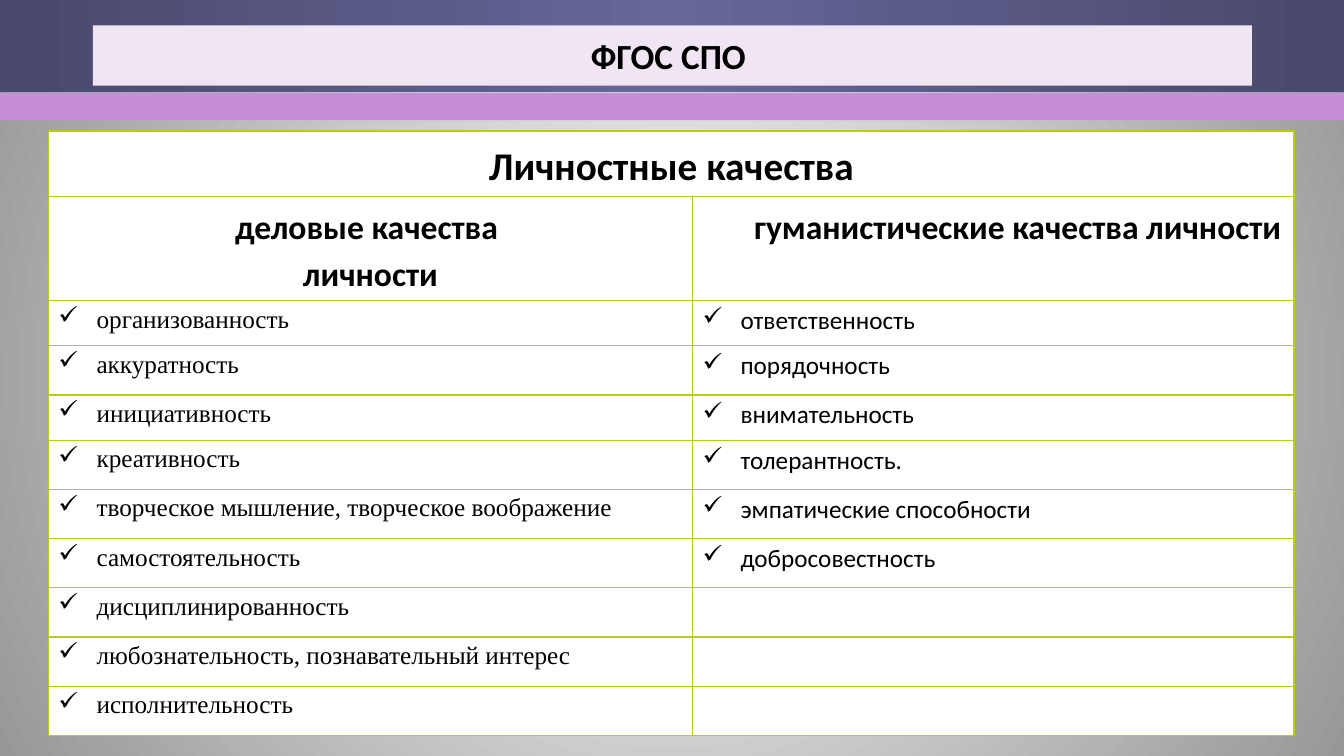
"""Build the slide on personal qualities in the ФГОС СПО standard."""
from dataclasses import dataclass
from itertools import zip_longest

from lxml.etree import SubElement
from pptx import Presentation
from pptx.dml.color import RGBColor
from pptx.enum.shapes import MSO_SHAPE
from pptx.enum.text import MSO_ANCHOR, MSO_AUTO_SIZE, PP_ALIGN
from pptx.oxml.ns import qn
from pptx.util import Cm, Pt


@dataclass(frozen=True)
class Theme:
    ink: str = "000000"
    paper: str = "FFFFFF"
    edge: str = "B9CA1A"
    title: str = "F0E5F3"
    stripe: str = "C78DD7"
    back: tuple = ((0, "FFFFFF"), (100, "979797"))
    band: tuple = ((0, "49496D"), (50, "666699"), (100, "49496D"))
    sans: str = "Calibri"
    serif: str = "Times New Roman"
    name: float = 25.2
    top: float = 28
    head: float = 24
    item: float = 18


@dataclass(frozen=True)
class Column:
    width: float
    font: str
    head: tuple
    indent: float
    items: tuple


THEME = Theme()
WIDTH = 33.87
COLUMNS = (
    Column(16.23, THEME.serif, ("деловые качества ", "личности"), 0, (
        "организованность", "аккуратность", "инициативность", "креативность",
        "творческое мышление, творческое воображение", "самостоятельность",
        "дисциплинированность", "любознательность, познавательный интерес",
        "исполнительность")),
    Column(15.16, THEME.sans, ("гуманистические качества личности",), 1.24, (
        "ответственность", "порядочность", "внимательность", "толерантность.",
        "эмпатические способности", "добросовестность")),
)
ROWS = (1.55, 2.54, 1.14, 1.24, 1.14) + (1.24,) * 6


def blend(solid, stops: tuple, radial: bool = False) -> None:
    grad = solid.makeelement(qn("a:gradFill"), {"rotWithShape": "1"})
    chain = SubElement(grad, qn("a:gsLst"))
    for place, color in stops:
        stop = SubElement(chain, qn("a:gs"), pos=str(place * 1000))
        SubElement(stop, qn("a:srgbClr"), val=color)
    if radial:
        ring = SubElement(grad, qn("a:path"), {"path": "circle"})
        SubElement(ring, qn("a:fillToRect"), dict.fromkeys("ltrb", "50000"))
    else:
        SubElement(grad, qn("a:lin"), ang="0", scaled="0")
    solid.getparent().replace(solid, grad)


def paint(fill, color: str) -> None:
    fill.solid()
    fill.fore_color.rgb = RGBColor.from_string(color)


def style(para, size: float, font: str, bold: bool) -> None:
    para.font.size = Pt(size)
    para.font.name = font
    para.font.bold = bold
    para.font.color.rgb = RGBColor.from_string(THEME.ink)


def strip(slide, top: float, height: float):
    shape = slide.shapes.add_shape(
        MSO_SHAPE.RECTANGLE, 0, Cm(top), Cm(WIDTH), Cm(height))
    shape.shadow.inherit = False
    shape.line.fill.background()
    paint(shape.fill, THEME.stripe)
    return shape


def dress(cell) -> None:
    props = cell._tc.get_or_add_tcPr()
    for side in "LRTB":
        line = SubElement(props, qn(f"a:ln{side}"), w=str(Pt(1)))
        solid = SubElement(line, qn("a:solidFill"))
        SubElement(solid, qn("a:srgbClr"), val=THEME.edge)
    paint(cell.fill, THEME.paper)


def label(cell, lines: tuple, size: float, indent: float = 0) -> None:
    cell.text = "\n".join(lines)
    for para in cell.text_frame.paragraphs:
        style(para, size, THEME.sans, True)
        para.alignment = PP_ALIGN.CENTER
        para.line_spacing = 1.15
        para._p.get_or_add_pPr().set("indent", str(Cm(indent)))


def check(cell, text: str, font: str) -> None:
    cell.text = text
    para = cell.text_frame.paragraphs[0]
    style(para, THEME.item, font, False)
    para.alignment = PP_ALIGN.JUSTIFY
    props = para._p.get_or_add_pPr()
    props.set("marL", str(Cm(0.96)))
    props.set("indent", str(-Cm(0.96)))
    mark = props.makeelement(qn("a:buChar"), {"char": "✓"})
    props.insert(0, mark)


def grid(slide) -> None:
    table = slide.shapes.add_table(
        len(ROWS), len(COLUMNS), Cm(1.22), Cm(3.3),
        Cm(sum(c.width for c in COLUMNS)), Cm(sum(ROWS))).table
    table.first_row = table.horz_banding = False
    for row, height in zip(table.rows, ROWS):
        row.height = Cm(height)
    for cell in table.iter_cells():
        dress(cell)
    table.cell(0, 0).merge(table.cell(0, 1))
    label(table.cell(0, 0), ("Личностные качества",), THEME.top)
    for col, data in enumerate(COLUMNS):
        table.columns[col].width = Cm(data.width)
        label(table.cell(1, col), data.head, THEME.head, data.indent)
    pairs = zip_longest(*(c.items for c in COLUMNS))
    for row, pair in enumerate(pairs, 2):
        for col, text in enumerate(pair):
            if text:
                check(table.cell(row, col), text, COLUMNS[col].font)


def main() -> None:
    deck = Presentation()
    deck.slide_width, deck.slide_height = Cm(WIDTH), Cm(19.05)
    slide = deck.slides.add_slide(deck.slide_layouts[5])
    paint(slide.background.fill, THEME.paper)
    back = slide._element.find(f".//{qn('p:bgPr')}/{qn('a:solidFill')}")
    blend(back, THEME.back, True)

    band = strip(slide, 0, 2.31)
    blend(band._element.spPr.find(qn("a:solidFill")), THEME.band)
    strip(slide, 2.34, 0.69)

    title = slide.shapes.title
    slide.shapes._spTree.append(title._element)
    title.left, title.top = Cm(2.34), Cm(0.64)
    title.width, title.height = Cm(29.21), Cm(1.52)
    paint(title.fill, THEME.title)
    frame = title.text_frame
    frame.text = "ФГОС СПО "
    frame.auto_size = MSO_AUTO_SIZE.NONE
    frame.vertical_anchor = MSO_ANCHOR.MIDDLE
    frame.paragraphs[0].alignment = PP_ALIGN.CENTER
    style(frame.paragraphs[0], THEME.name, THEME.sans, True)

    grid(slide)
    deck.save("out.pptx")


if __name__ == "__main__":
    main()
